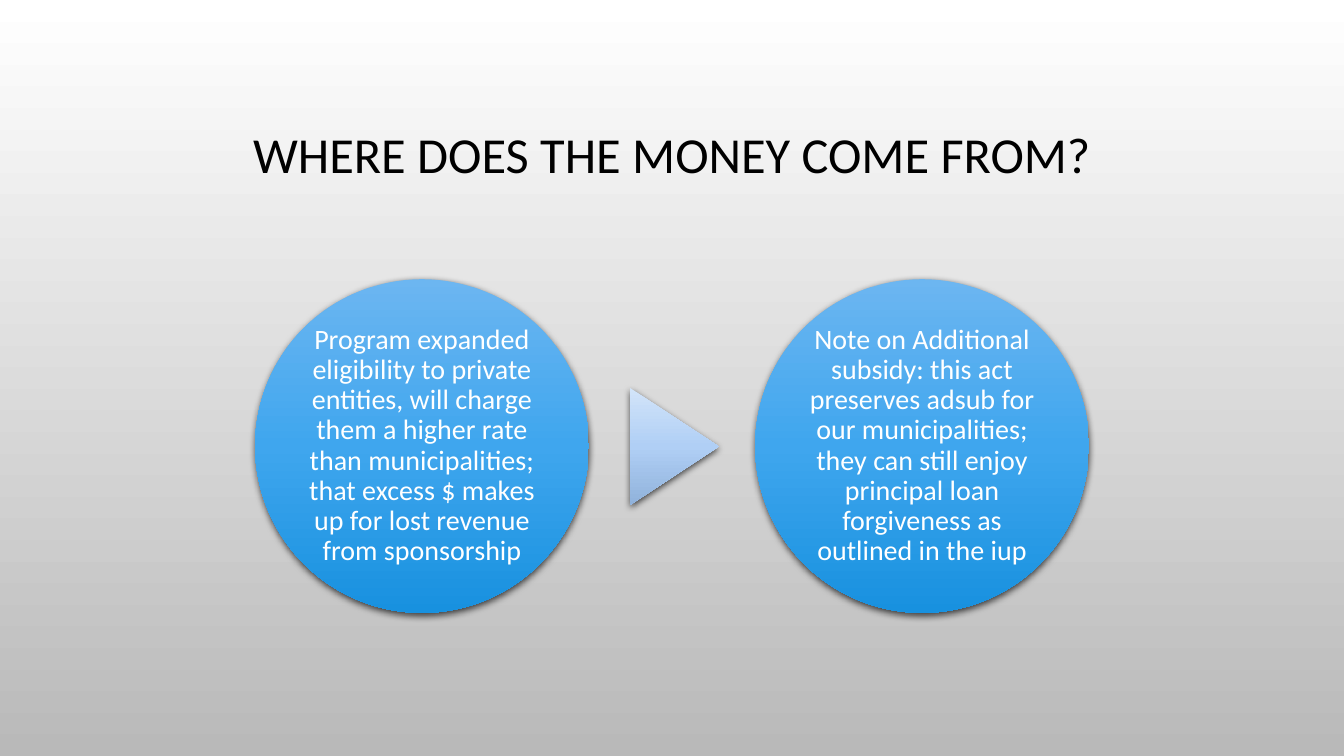
from copy import deepcopy

from lxml import etree
from pptx import Presentation
from pptx.dml.color import RGBColor
from pptx.enum.shapes import MSO_SHAPE
from pptx.enum.text import MSO_ANCHOR, PP_ALIGN
from pptx.oxml.ns import qn
from pptx.util import Inches, Pt

OVAL = MSO_SHAPE.OVAL
TRIANGLE = MSO_SHAPE.ISOSCELES_TRIANGLE
MIDDLE = MSO_ANCHOR.MIDDLE
CENTER = PP_ALIGN.CENTER

COLORS = {
    "black": "000000", "white": "FFFFFF", "grey": "B9B9B9",
    "circle_top": "6CB6F1", "circle_mid": "3FA6EE", "circle_end": "1891DF",
    "arrow_top": "D2E4F9", "arrow_mid": "B0CFF5", "arrow_end": "90B2DB",
}
FONT = "Calibri"
CIRCLE_SIZE = 3.31
CIRCLES = [
    (2.53, "Program expanded eligibility to private entities, will charge "
           "them a higher rate than municipalities; that excess $ makes up "
           "for lost revenue from sponsorship"),
    (7.49, "Note on Additional subsidy: this act preserves adsub for our "
           "municipalities; they can still enjoy principal loan forgiveness "
           "as outlined in the iup"),
]


def set_gradient(fill, element, names):
    """Fill from top to bottom with evenly spaced colour stops."""
    fill.gradient()
    fill.gradient_angle = 270
    element.find(".//" + qn("a:gradFill")).set("rotWithShape", "0")
    stop_list = element.find(".//" + qn("a:gsLst"))
    while len(stop_list) < len(names):
        stop_list.append(deepcopy(stop_list[0]))
    for i, (stop, name) in enumerate(zip(fill.gradient_stops, names)):
        stop.color.rgb = RGBColor.from_string(COLORS[name])
        stop.position = i / (len(names) - 1)


def add_shadow(shape):
    shape.shadow.inherit = False
    effects = shape.element.spPr.find(qn("a:effectLst"))
    shadow = etree.SubElement(effects, qn("a:outerShdw"), {
        "blurRad": str(Pt(5)), "dist": str(Pt(2)), "dir": "5400000",
        "algn": "ctr", "rotWithShape": "0"})
    color = etree.SubElement(shadow, qn("a:srgbClr"), val=COLORS["black"])
    etree.SubElement(color, qn("a:alpha"), val="69000")


def add_text(shape, text, size, color, inset_x, inset_y):
    tf = shape.text_frame
    frame_format = {
        "word_wrap": True, "vertical_anchor": MIDDLE,
        "margin_left": Inches(inset_x), "margin_right": Inches(inset_x),
        "margin_top": Inches(inset_y), "margin_bottom": Inches(inset_y),
    }
    for name, value in frame_format.items():
        setattr(tf, name, value)
    p = tf.paragraphs[0]
    p.alignment = CENTER
    p.line_spacing = 0.9
    r = p.add_run()
    r.text = text
    for name, value in {"name": FONT, "size": Pt(size)}.items():
        setattr(r.font, name, value)
    r.font.color.rgb = RGBColor.from_string(COLORS[color])


def add_gradient_shape(s, kind, box, names):
    sp = s.shapes.add_shape(kind, *map(Inches, box))
    set_gradient(sp.fill, sp.element, names)
    sp.line.fill.background()
    add_shadow(sp)
    return sp


def main():
    prs = Presentation()
    prs.slide_width, prs.slide_height = Inches(13.33), Inches(7.5)
    s = prs.slides.add_slide(prs.slide_layouts[6])
    set_gradient(s.background.fill, s.element, ["white", "grey"])

    # Title
    title = s.shapes.add_textbox(*map(Inches, (1, 0.68, 11.33, 1.75)))
    add_text(title, "WHERE DOES THE MONEY COME FROM?", 36, "black", 0.1, 0.05)

    # Circles with their text
    for left, text in CIRCLES:
        circle = add_gradient_shape(
            s, OVAL, (left, 2.77, CIRCLE_SIZE, CIRCLE_SIZE),
            ["circle_top", "circle_mid", "circle_end"])
        add_text(circle, text, 20, "white", 0.03, 0.03)

    # Arrow between the circles
    arrow = add_gradient_shape(s, TRIANGLE, (6.11, 3.99, 1.16, 0.88),
                               ["arrow_top", "arrow_mid", "arrow_end"])
    arrow.rotation = 90

    prs.save("out.pptx")


if __name__ == "__main__":
    main()
